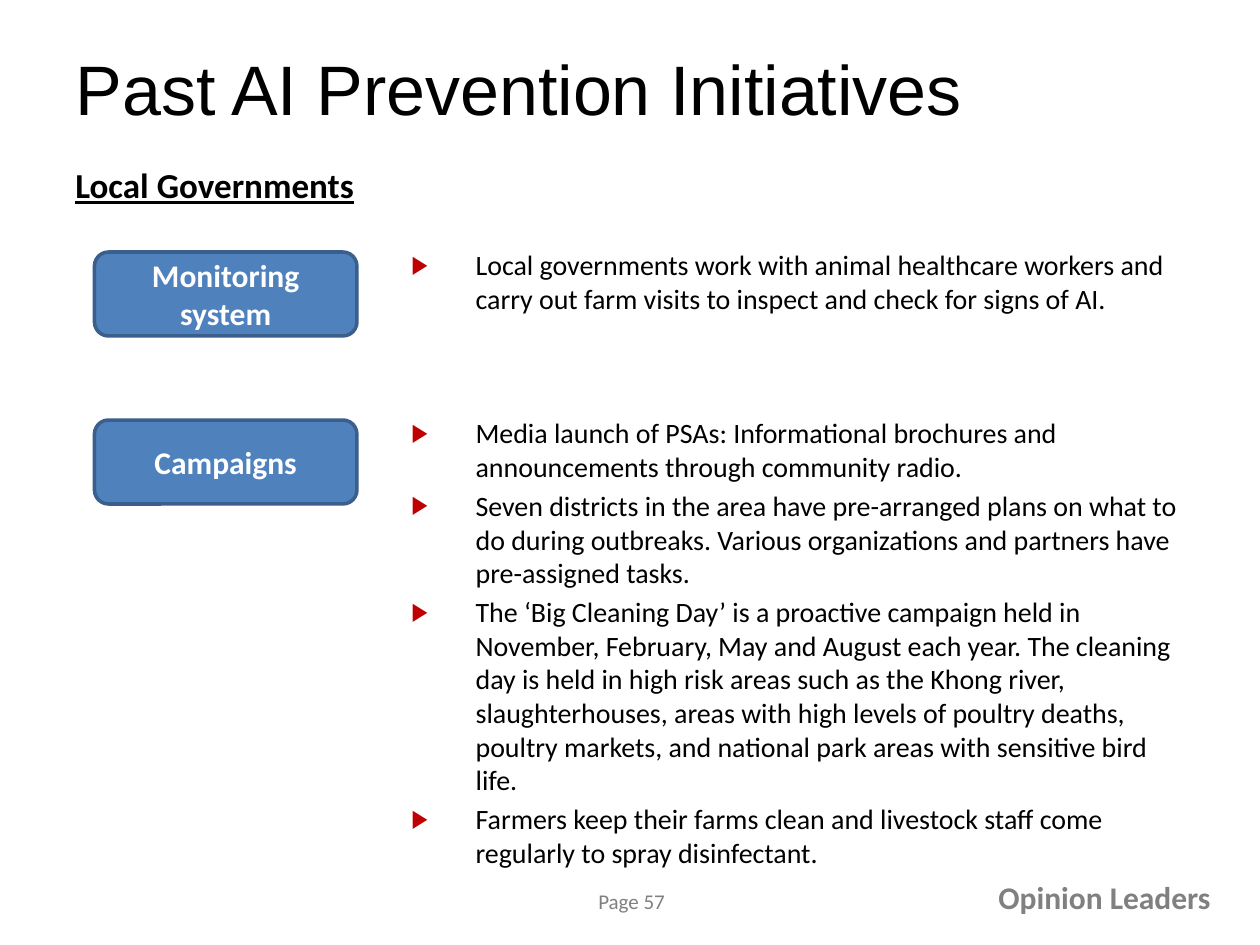
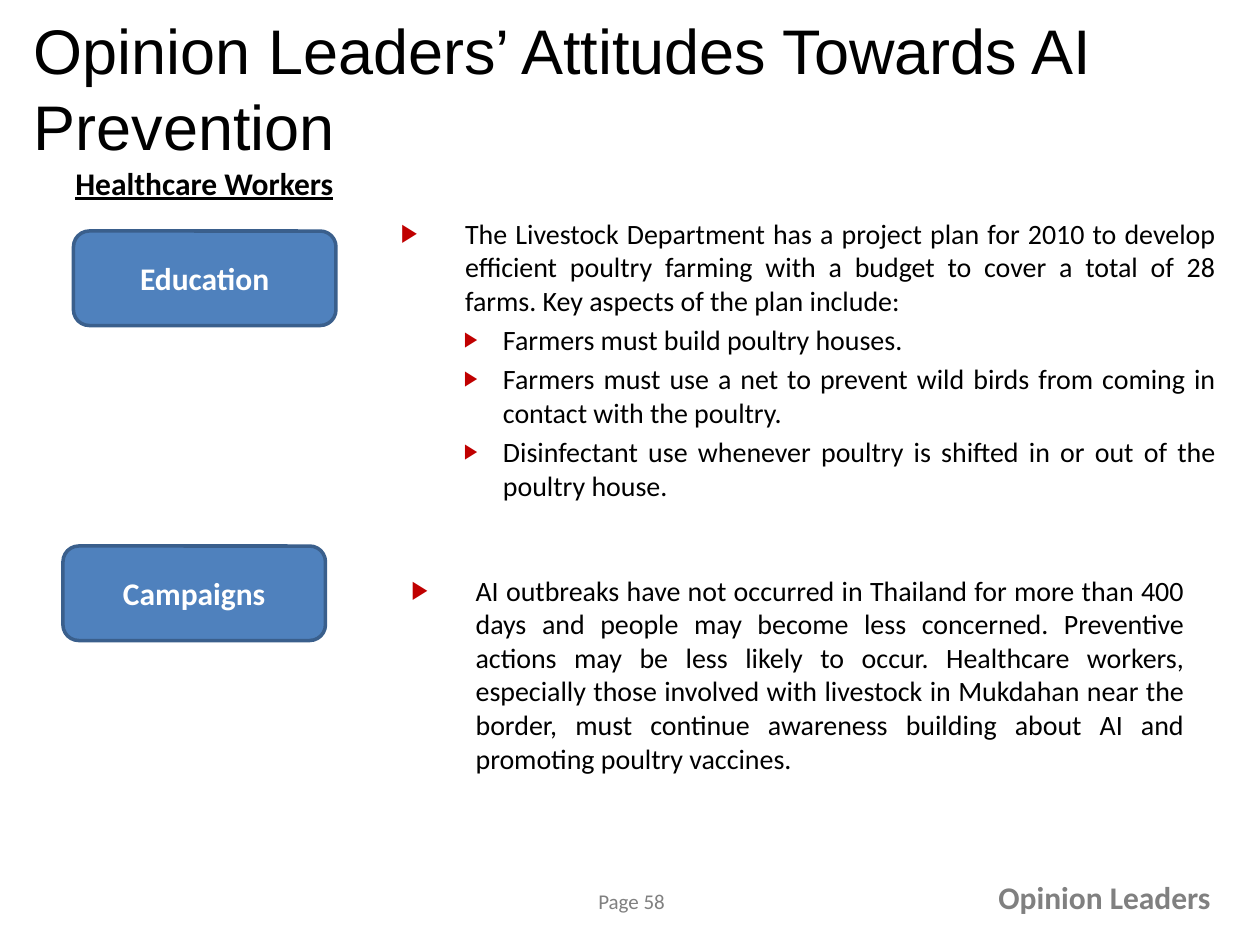
import dataclasses
import typing

import lxml.etree
import pptx
import pptx.dml.color
import pptx.enum.shapes
import pptx.enum.text
import pptx.oxml.ns
import pptx.util

Align = pptx.enum.text.PP_ALIGN
Anchor = pptx.enum.text.MSO_ANCHOR
Fit = pptx.enum.text.MSO_AUTO_SIZE

WIDE, HIGH = pptx.util.Inches(10), pptx.util.Inches(7.5)
COLS, ROWS = 120, 90


@dataclasses.dataclass(frozen=True)
class Theme:
    ink: str = "000000"
    pale: str = "FFFFFF"
    grey: str = "808080"
    blue: str = "4F81BD"
    edge: str = "3A5F8C"
    red: str = "C00000"
    head: str = "Arial"
    body: str = "Calibri"
    text: float = 16
    label: float = 18
    small: float = 12
    gap: float = 3.2


THEME = Theme()


class Box(typing.NamedTuple):
    col: float
    row: float
    cols: float
    rows: float


class Mark(typing.NamedTuple):
    left: float
    hang: float
    size: int


MARKS = (Mark(0.51, 0.51, 90), Mark(0.81, 0.31, 75))


class Point(typing.NamedTuple):
    text: str
    level: int = 0


@dataclasses.dataclass(frozen=True)
class Topic:
    label: str
    tag: Box
    area: Box
    points: tuple[Point, ...]
    align: Align = Align.LEFT


@dataclasses.dataclass(frozen=True)
class Page:
    number: int
    title: str
    place: Box
    size: float
    group: str
    group_size: float
    topics: tuple[Topic, ...]


PAGES = (
    Page(57, "Past AI Prevention Initiatives", Box(6, 3.6, 108, 9.4), 40,
         "Local Governments", 20, (
        Topic("Monitoring system", Box(9, 24, 25, 8), Box(38, 23, 76, 12), (
            Point("Local governments work with animal healthcare workers and carry out "
                  "farm visits to inspect and check for signs of AI."),
        )),
        Topic("Campaigns", Box(9, 40, 25, 8), Box(38, 39, 76, 46), (
            Point("Media launch of PSAs: Informational brochures and announcements "
                  "through community radio."),
            Point("Seven districts in the area have pre-arranged plans on what to do "
                  "during outbreaks. Various organizations and partners have "
                  "pre-assigned tasks."),
            Point("The ‘Big Cleaning Day’ is a proactive campaign held in November, "
                  "February, May and August each year. The cleaning day is held in high "
                  "risk areas such as the Khong river, slaughterhouses, areas with high "
                  "levels of poultry deaths, poultry markets, and national park areas "
                  "with sensitive bird life."),
            Point("Farmers keep their farms clean and livestock staff come regularly to "
                  "spray disinfectant."),
        )),
    )),
    Page(58, "Opinion Leaders’ Attitudes Towards AI Prevention",
         Box(2, 3.6, 118, 9.4), 36, "Healthcare Workers", 18, (
        Topic("Education", Box(7, 22, 25, 9), Box(37, 20, 80, 29), (
            Point("The Livestock Department has a project plan for 2010 to develop "
                  "efficient poultry farming with a budget to cover a total of 28 farms. "
                  "Key aspects of the plan include:"),
            Point("Farmers must build poultry houses.", 1),
            Point("Farmers must use a net to prevent wild birds from coming in contact "
                  "with the poultry.", 1),
            Point("Disinfectant use whenever poultry is shifted in or out of the "
                  "poultry house.", 1),
        ), Align.JUSTIFY),
        Topic("Campaigns", Box(6, 52, 25, 9), Box(38, 54, 76, 29), (
            Point("AI outbreaks have not occurred in Thailand for more than 400 days and "
                  "people may become less concerned. Preventive actions may be less "
                  "likely to occur. Healthcare workers, especially those involved with "
                  "livestock in Mukdahan near the border, must continue awareness "
                  "building about AI and promoting poultry vaccines."),
        ), Align.JUSTIFY),
    )),
)


def span(box: Box) -> tuple[int, int, int, int]:
    return (int(WIDE * box.col / COLS), int(HIGH * box.row / ROWS),
            int(WIDE * box.cols / COLS), int(HIGH * box.rows / ROWS))


def shade(code: str) -> pptx.dml.color.RGBColor:
    return pptx.dml.color.RGBColor.from_string(code)


def style(para, size: float, color: str, bold: bool = False,
          line: bool = False, face: str = THEME.body) -> None:
    font = para.font
    font.name, font.size = face, pptx.util.Pt(size)
    font.bold, font.underline = bold, line
    font.color.rgb = shade(color)


def add_mark(para, mark: Mark) -> None:
    props = para._p.get_or_add_pPr()
    props.set("marL", str(pptx.util.Inches(mark.left)))
    props.set("indent", str(-pptx.util.Inches(mark.hang)))
    name = pptx.oxml.ns.qn
    tint = lxml.etree.SubElement(props, name("a:buClr"))
    lxml.etree.SubElement(tint, name("a:srgbClr"), val=THEME.red)
    lxml.etree.SubElement(props, name("a:buSzPct"), val=str(mark.size * 1000))
    lxml.etree.SubElement(props, name("a:buFont"), typeface=THEME.head)
    lxml.etree.SubElement(props, name("a:buChar"), char="▶")


def add_title(slide, page: Page) -> None:
    title = slide.shapes.title
    title.left, title.top, title.width, title.height = span(page.place)
    frame = title.text_frame
    frame.text = page.title
    frame.word_wrap, frame.auto_size = True, Fit.NONE
    frame.vertical_anchor = Anchor.MIDDLE
    para = frame.paragraphs[0]
    para.alignment = Align.LEFT
    style(para, page.size, THEME.ink, face=THEME.head)


def add_line(slide, text: str, box: Box, size: float, color: str, bold: bool = False,
             line: bool = False, align: Align = Align.LEFT) -> None:
    frame = slide.shapes.add_textbox(*span(box)).text_frame
    frame.word_wrap = False
    frame.text = text
    para = frame.paragraphs[0]
    para.alignment = align
    style(para, size, color, bold, line)


def add_tag(slide, topic: Topic) -> None:
    kind = pptx.enum.shapes.MSO_SHAPE.ROUNDED_RECTANGLE
    tag = slide.shapes.add_shape(kind, *span(topic.tag))
    tag.shadow.inherit = False
    tag.fill.solid()
    tag.fill.fore_color.rgb = shade(THEME.blue)
    tag.line.color.rgb = shade(THEME.edge)
    tag.line.width = pptx.util.Pt(2)
    frame = tag.text_frame
    frame.text = topic.label
    frame.word_wrap, frame.vertical_anchor = True, Anchor.MIDDLE
    para = frame.paragraphs[0]
    para.alignment = Align.CENTER
    style(para, THEME.label, THEME.pale, bold=True)


def add_points(slide, topic: Topic) -> None:
    frame = slide.shapes.add_textbox(*span(topic.area)).text_frame
    frame.word_wrap = True
    for index, point in enumerate(topic.points):
        para = frame.add_paragraph() if index else frame.paragraphs[0]
        para.text, para.level = point.text, point.level
        para.alignment = topic.align
        add_mark(para, MARKS[point.level])
        if index:
            para.space_before = pptx.util.Pt(THEME.gap)
        style(para, THEME.text, THEME.ink)


def add_page(deck, page: Page) -> None:
    slide = deck.slides.add_slide(deck.slide_layouts[5])
    add_title(slide, page)
    add_line(slide, page.group, Box(6, 15, 31, 5), page.group_size, THEME.ink,
             bold=True, line=True)
    for topic in page.topics:
        add_tag(slide, topic)
        add_points(slide, topic)
    add_line(slide, f"Page {page.number}", Box(55.8, 84, 9.2, 3.6), THEME.small, THEME.grey)
    add_line(slide, "Opinion Leaders", Box(93.7, 83, 22.8, 4.8), THEME.label, THEME.grey,
             bold=True, align=Align.RIGHT)


def main() -> None:
    deck = pptx.Presentation()
    deck.slide_width, deck.slide_height = WIDE, HIGH
    for page in PAGES:
        add_page(deck, page)
    deck.save("out.pptx")


if __name__ == "__main__":
    main()
